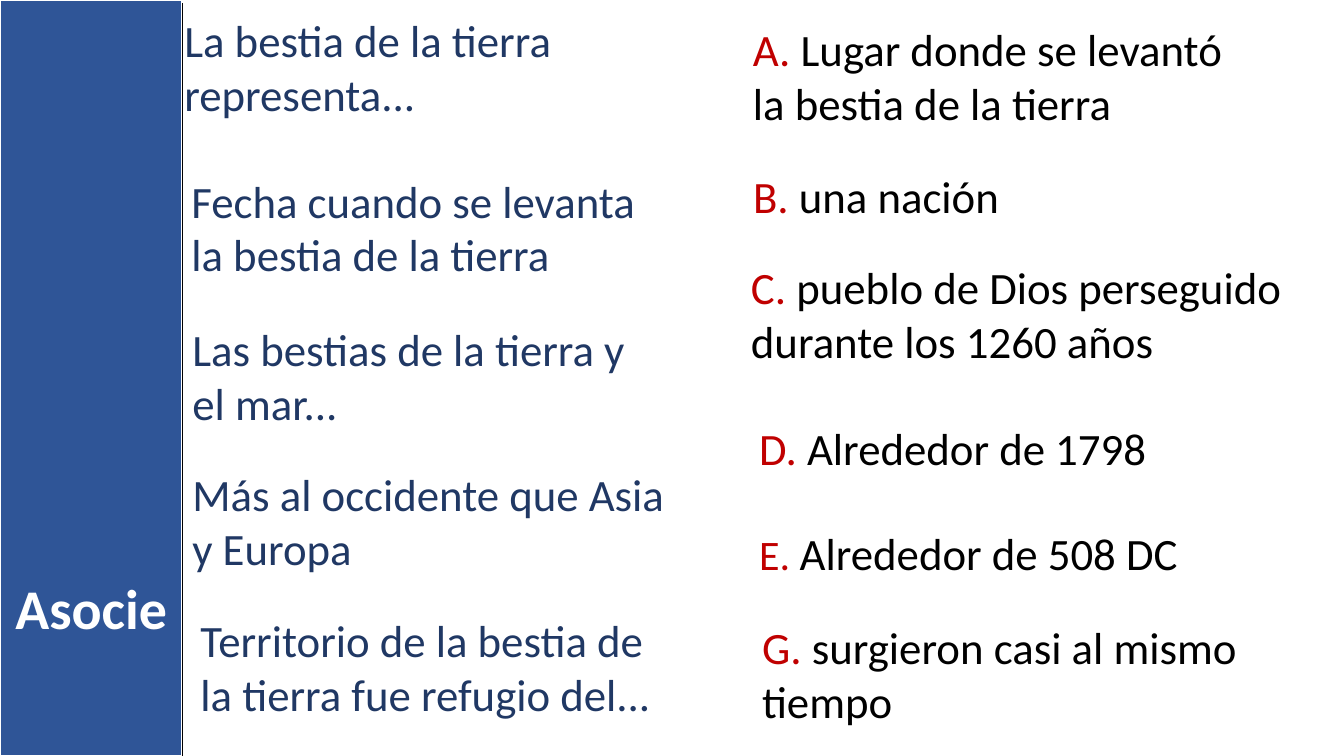
import pptx
import pptx.dml.color
import pptx.enum.shapes
import pptx.enum.text
import pptx.oxml
import pptx.oxml.ns
import pptx.util

PX = 9144  # 100 px to the inch
WIDE, HIGH = 1333, 750
BAR = 181
WHITE, BLACK, BLUE, NAVY, RED = "FFFFFF", "000000", "2F5597", "203864", "C00000"

# left, top, width, height, text
CLUES = [
    (173, 8, 573, 118, "La bestia de la tierra representa..."),
    (180, 167, 494, 118, "Fecha cuando se levanta la bestia de la tierra"),
    (181, 314, 485, 118, "Las bestias de la tierra y el mar..."),
    (181, 458, 510, 118, "Más al occidente que Asia y Europa"),
    (189, 603, 477, 118, "Territorio de la bestia de la tierra fue refugio del..."),
]

# left, top, width, height, letter, letter size, text
REPLIES = [
    (737, 17, 504, 118, "A. ", 32, "Lugar donde se levantó la bestia de la tierra"),
    (737, 162, 529, 64, "B. ", 32, "una nación"),
    (735, 253, 550, 118, "C. ", 32, "pueblo de Dios perseguido durante los 1260 años"),
    (743, 412, 553, 64, "D. ", 32, "Alrededor de 1798"),
    (743, 517, 529, 64, "E. ", 30, "Alrededor de 508 DC"),
    (746, 610, 547, 118, "G. ", 32, "surgieron casi al mismo tiempo"),
]


def px(*lengths):
    return [pptx.util.Emu(n * PX) for n in lengths]


def color(code):
    return pptx.dml.color.RGBColor.from_string(code)


def write(para, text, size=32, tint=BLACK, bold=False):
    run = para.add_run()
    run.text = text
    run.font.name = "Calibri"
    run.font.size = pptx.util.Pt(size)
    run.font.color.rgb = color(tint)
    run.font.bold = bold


def add_box(slide, box):
    """Add a wrapping text box and return its first paragraph."""
    frame = slide.shapes.add_textbox(*px(*box)).text_frame
    frame.word_wrap = True
    frame.auto_size = pptx.enum.text.MSO_AUTO_SIZE.SHAPE_TO_FIT_TEXT
    return frame.paragraphs[0]


def add_bar(slide, x, y, w, h):
    bar = slide.shapes.add_shape(
        pptx.enum.shapes.MSO_SHAPE.RECTANGLE, *px(x, y, w, h))
    bar.shadow.inherit = False
    bar.fill.solid()
    bar.fill.fore_color.rgb = color(BLUE)
    bar.line.color.rgb = color(WHITE)
    bar.line.width = pptx.util.Pt(1.5)


def add_title(slide, x, y, w, h):
    """Write the heading low in the bar and draw the bar's right edge."""
    para = add_box(slide, (x, y + 564, w, 77))
    para.alignment = pptx.enum.text.PP_ALIGN.CENTER
    write(para, "Asocie", size=40, tint=WHITE, bold=True)
    edge = slide.shapes.add_connector(
        pptx.enum.shapes.MSO_CONNECTOR.STRAIGHT, *px(x + w, y + 3, x + w, y + h))
    edge.line.color.rgb = color(BLACK)
    edge.line.width = pptx.util.Pt(1)
    props = edge._element.spPr
    props.append(pptx.oxml.parse_xml(
        "<a:effectLst %s/>" % pptx.oxml.ns.nsdecls("a")))


def add_clues(slide):
    for *box, text in CLUES:
        write(add_box(slide, box), text, tint=NAVY)


def add_replies(slide):
    for *box, letter, size, text in REPLIES:
        para = add_box(slide, box)
        write(para, letter, size=size, tint=RED)
        write(para, text)


def main():
    deck = pptx.Presentation()
    deck.slide_width, deck.slide_height = px(WIDE, HIGH)
    slide = deck.slides.add_slide(deck.slide_layouts[6])
    add_bar(slide, 0, 0, BAR, HIGH)
    add_clues(slide)
    add_replies(slide)
    add_title(slide, 0, 0, BAR, HIGH)
    deck.save("out.pptx")


if __name__ == "__main__":
    main()
